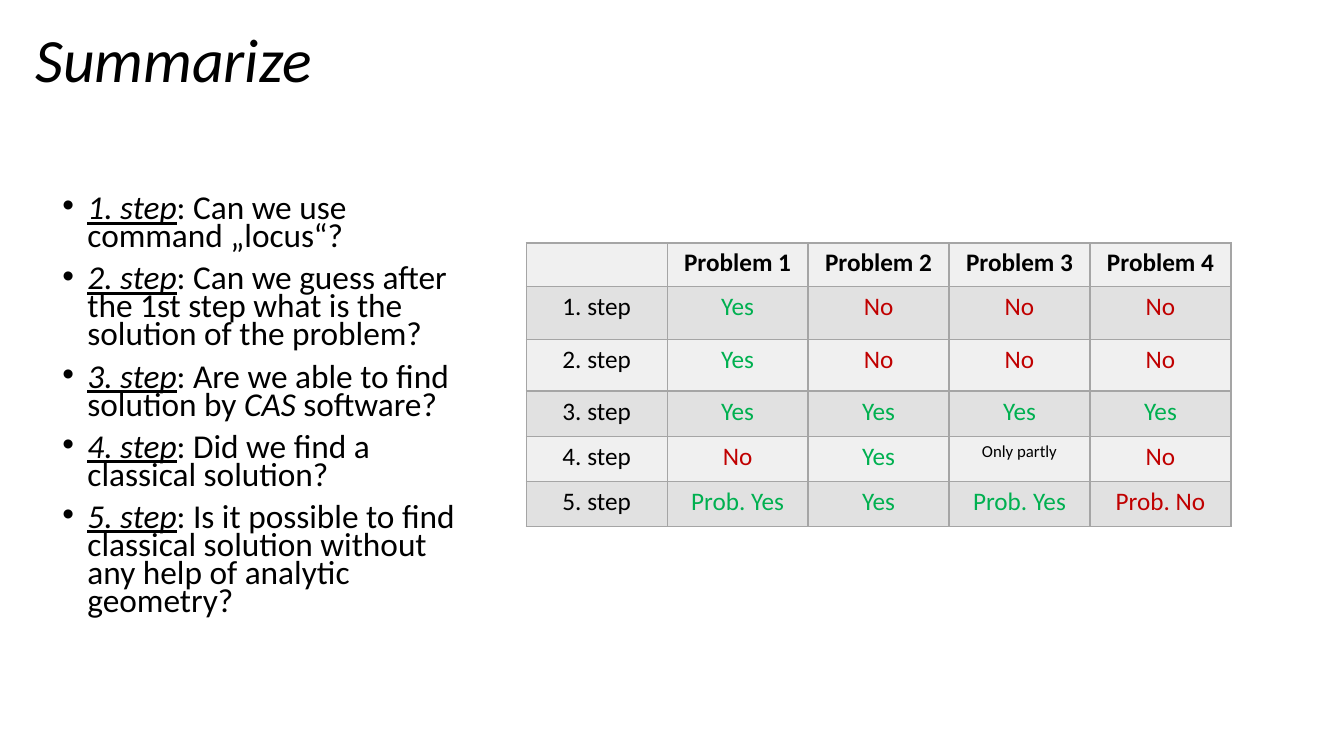
"""Build a summary slide with five solution steps and a table of results per problem."""
import dataclasses

import lxml.etree
import pptx
import pptx.dml.color
import pptx.enum.text
import pptx.oxml.ns
import pptx.slide
import pptx.table
import pptx.text.text
import pptx.util

BLACK = pptx.dml.color.RGBColor(0x00, 0x00, 0x00)
GREEN = pptx.dml.color.RGBColor(0x00, 0xB0, 0x50)
RED = pptx.dml.color.RGBColor(0xC0, 0x00, 0x00)
LIGHT_BAND = pptx.dml.color.RGBColor(0xF0, 0xF0, 0xF0)
DARK_BAND = pptx.dml.color.RGBColor(0xE1, 0xE1, 0xE1)
BORDER = pptx.dml.color.RGBColor(0xA5, 0xA5, 0xA5)

FONT = "Calibri"
SLIDE_WIDTH = pptx.util.Inches(13.33)
SLIDE_HEIGHT = pptx.util.Inches(7.5)
COLUMN_SHARE = 10.49
ROW_SHARES = [5.73, 7.07, 6.8, 6, 6, 5.87]


@dataclasses.dataclass(frozen=True)
class Area:
    """A rectangle in percent of the slide's width and height."""

    left: float
    top: float
    width: float
    height: float

    def lengths(self) -> tuple[int, int, int, int]:
        """Return left, top, width and height as slide lengths."""
        return across(self.left), down(self.top), across(self.width), down(self.height)


@dataclasses.dataclass(frozen=True)
class Step:
    """A question, with its parts alternating between upright and italic."""

    label: str
    question: tuple[str, ...]
    answers: tuple[str, ...]


TITLE_AREA = Area(1.88, -1.33, 86.25, 19.33)
QUESTIONS_AREA = Area(3.9, 25.47, 31.2, 57.33)
RESULTS_AREA = Area(39.15, 32.13, 5 * COLUMN_SHARE, sum(ROW_SHARES))

STEPS = [
    Step("1. step", (": Can we use command „locus“?",), ("Yes", "No", "No", "No")),
    Step("2. step", (": Can we guess after the 1st step what is the solution of the problem?",),
         ("Yes", "No", "No", "No")),
    Step("3. step", (": Are we able to find solution by ", "CAS ", "software?"),
         ("Yes", "Yes", "Yes", "Yes")),
    Step("4. step", (": Did we find a classical solution?",),
         ("No", "Yes", "Only partly", "No")),
    Step("5. step", (": Is it possible to find classical solution without any help of "
                     "analytic geometry?",),
         ("Prob. Yes", "Yes", "Prob. Yes", "Prob. No")),
]


def across(share: float) -> int:
    """Return a percentage of the slide's width."""
    return int(SLIDE_WIDTH * share / 100)


def down(share: float) -> int:
    """Return a percentage of the slide's height."""
    return int(SLIDE_HEIGHT * share / 100)


def style(paragraph: pptx.text.text._Paragraph, size: float,
          color: pptx.dml.color.RGBColor = BLACK) -> None:
    """Set the font of a whole paragraph."""
    paragraph.font.name = FONT
    paragraph.font.size = pptx.util.Pt(size)
    paragraph.font.color.rgb = color


def add_text_area(slide: pptx.slide.Slide, area: Area) -> pptx.text.text.TextFrame:
    """Add a wrapping text box and return its text frame."""
    frame = slide.shapes.add_textbox(*area.lengths()).text_frame
    frame.word_wrap = True
    return frame


def add_title(slide: pptx.slide.Slide) -> None:
    """Add the slide's heading."""
    frame = add_text_area(slide, TITLE_AREA)
    frame.vertical_anchor = pptx.enum.text.MSO_ANCHOR.MIDDLE
    heading = frame.paragraphs[0]
    heading.text = "Summarize"
    heading.line_spacing = 0.9
    style(heading, 44)
    heading.font.italic = True


def add_bullet(paragraph: pptx.text.text._Paragraph) -> None:
    """Give a paragraph a hanging round bullet."""
    properties = paragraph._p.get_or_add_pPr()
    hanging = pptx.util.Inches(0.25)
    properties.set("marL", str(hanging))
    properties.set("indent", str(-hanging))
    typeface = lxml.etree.SubElement(properties, pptx.oxml.ns.qn("a:buFont"))
    typeface.set("typeface", "Arial")
    bullet = lxml.etree.SubElement(properties, pptx.oxml.ns.qn("a:buChar"))
    bullet.set("char", "•")


def add_questions(slide: pptx.slide.Slide) -> None:
    """Add the bulleted question of each step."""
    frame = add_text_area(slide, QUESTIONS_AREA)
    for index, step in enumerate(STEPS):
        paragraph = frame.add_paragraph() if index else frame.paragraphs[0]
        paragraph.line_spacing = 0.7
        paragraph.space_before = pptx.util.Pt(10)
        add_bullet(paragraph)
        style(paragraph, 23.8)
        label = paragraph.add_run()
        label.text = step.label
        label.font.italic = True
        label.font.underline = True
        for position, part in enumerate(step.question):
            wording = paragraph.add_run()
            wording.text = part
            wording.font.italic = position % 2 == 1


def answer_color(text: str) -> pptx.dml.color.RGBColor:
    """Return green for a yes, red for a no and black otherwise."""
    if text.endswith("Yes"):
        return GREEN
    return RED if text.endswith("No") else BLACK


def add_borders(cell: pptx.table._Cell) -> None:
    """Draw a thin line on each side of a cell."""
    properties = cell._tc.get_or_add_tcPr()
    for index, side in enumerate(("a:lnL", "a:lnR", "a:lnT", "a:lnB")):
        line = lxml.etree.Element(pptx.oxml.ns.qn(side), w=str(pptx.util.Pt(1)))
        fill = lxml.etree.SubElement(line, pptx.oxml.ns.qn("a:solidFill"))
        lxml.etree.SubElement(fill, pptx.oxml.ns.qn("a:srgbClr"), val=str(BORDER))
        properties.insert(index, line)


def add_results(slide: pptx.slide.Slide) -> None:
    """Add the table of answers by step and problem."""
    header = ("", *(f"Problem {number}" for number in range(1, 5)))
    rows = [header, *((step.label, *step.answers) for step in STEPS)]
    table = slide.shapes.add_table(len(rows), len(header), *RESULTS_AREA.lengths()).table
    for column in table.columns:
        column.width = across(COLUMN_SHARE)
    for row_index, (row, share) in enumerate(zip(rows, ROW_SHARES)):
        table.rows[row_index].height = down(share)
        for column_index, text in enumerate(row):
            cell = table.cell(row_index, column_index)
            cell.fill.solid()
            cell.fill.fore_color.rgb = DARK_BAND if row_index % 2 else LIGHT_BAND
            add_borders(cell)
            entry = cell.text_frame.paragraphs[0]
            entry.text = text
            entry.alignment = pptx.enum.text.PP_ALIGN.CENTER
            style(entry, 12 if text == "Only partly" else 18, answer_color(text))
            entry.font.bold = row_index == 0


def main() -> None:
    """Create and save the presentation."""
    presentation = pptx.Presentation()
    presentation.slide_width = SLIDE_WIDTH
    presentation.slide_height = SLIDE_HEIGHT
    slide = presentation.slides.add_slide(presentation.slide_layouts[6])
    add_title(slide)
    add_questions(slide)
    add_results(slide)
    presentation.save("out.pptx")


if __name__ == "__main__":
    main()
